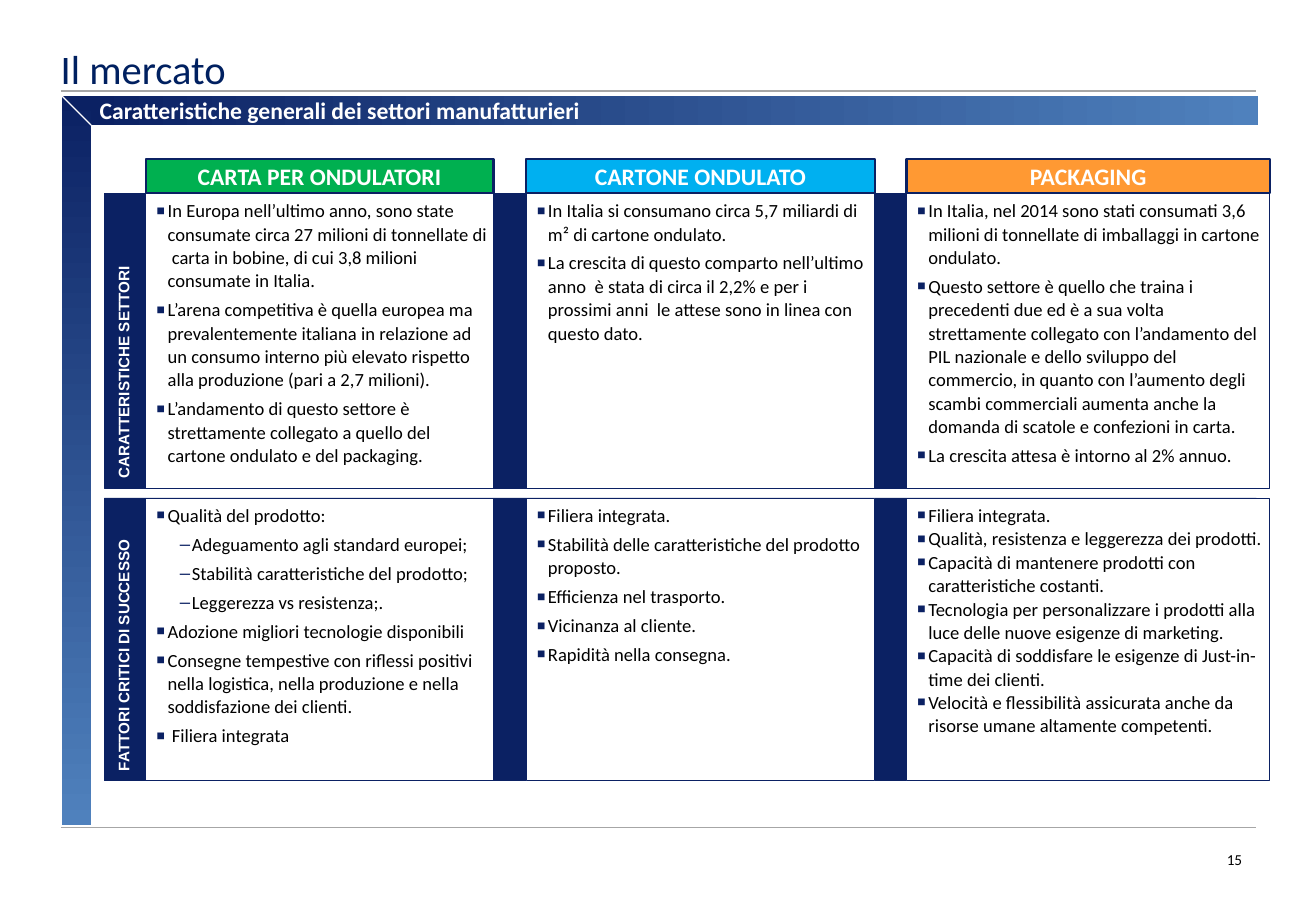
from dataclasses import dataclass

from lxml import etree
from pptx import Presentation
from pptx import util as u
from pptx.dml.color import RGBColor
from pptx.enum import shapes, text
from pptx.oxml import ns


@dataclass(frozen=True)
class Theme:
    navy: str = "0B2163"
    blue: str = "4F81BD"
    title: str = "002060"
    rule: str = "A6A6A6"
    white: str = "FFFFFF"
    black: str = "000000"
    green: str = "00B050"
    cyan: str = "00B0F0"
    orange: str = "FF9933"
    body_font: str = "Calibri"
    label_font: str = "Arial"
    title_size: float = 24
    heading_size: float = 14
    body_size: float = 11
    small_size: float = 9


THEME = Theme()
LEFT, CENTER = text.PP_ALIGN.LEFT, text.PP_ALIGN.CENTER
TOP, MIDDLE = text.MSO_ANCHOR.TOP, text.MSO_ANCHOR.MIDDLE


class SlideBuilder:
    def __init__(self, slide, theme):
        self.slide = slide
        self.theme = theme

    def rule(self, start, end, color):
        points = [u.Inches(value) for value in (*start, *end)]
        line = self.slide.shapes.add_connector(shapes.MSO_CONNECTOR.STRAIGHT, *points)
        line.line.color.rgb = RGBColor.from_string(color)
        line.line.width = u.Pt(0.75)
        etree.SubElement(line._element.spPr, ns.qn("a:effectLst"))

    def rectangle(self, box, fill, border=0):
        shape = self.slide.shapes.add_shape(
            shapes.MSO_SHAPE.RECTANGLE, *map(u.Inches, box))
        shape.shadow.inherit = False
        shape.fill.solid()
        shape.fill.fore_color.rgb = RGBColor.from_string(fill)
        if border:
            shape.line.color.rgb = RGBColor.from_string(self.theme.navy)
            shape.line.width = u.Pt(border)
        else:
            shape.line.fill.background()
        return shape

    def gradient(self, box, angle):
        shape = self.rectangle(box, self.theme.navy)
        shape.fill.gradient()
        shape.fill.gradient_angle = angle
        for stop, color in zip(shape.fill.gradient_stops, (self.theme.navy, self.theme.blue)):
            stop.color.rgb = RGBColor.from_string(color)
        return shape

    def text_box(self, box):
        return self.slide.shapes.add_textbox(*map(u.Inches, box))

    def frame(self, shape, insets, anchor):
        frame = shape.text_frame
        frame.word_wrap = True
        frame.vertical_anchor = anchor
        (frame.margin_left, frame.margin_top,
         frame.margin_right, frame.margin_bottom) = map(u.Inches, insets)
        return frame

    def run(self, paragraph, words, size, color, bold=False, font=None):
        run = paragraph.add_run()
        run.text = words
        run.font.name = font or self.theme.body_font
        run.font.size = u.Pt(size)
        run.font.bold = bold
        run.font.color.rgb = RGBColor.from_string(color)

    def label(self, shape, words, size, color, insets=(0, 0, 0, 0), anchor=MIDDLE,
              align=CENTER, bold=False, font=None, spacing=1.0):
        frame = self.frame(shape, insets, anchor)
        paragraph = frame.paragraphs[0]
        paragraph.alignment = align
        paragraph.line_spacing = spacing
        self.run(paragraph, words, size, color, bold, font)
        return frame

    def heading(self, box, words, fill):
        self.label(self.rectangle(box, fill, 1.5), words, self.theme.heading_size,
                   self.theme.white, (0.04,) * 4, bold=True)

    def band(self, box, words):
        frame = self.label(self.rectangle(box, self.theme.navy, 0.5), words,
                           self.theme.small_size, self.theme.white, (0.08,) * 4,
                           TOP, LEFT, True, self.theme.label_font)
        frame._txBody.bodyPr.set("vert", "vert270")

    def bullet(self, paragraph, mark, level, margin, hanging, size):
        paragraph.level = level
        properties = paragraph._p.get_or_add_pPr()
        properties.set("marL", str(u.Inches(margin)))
        properties.set("indent", str(-u.Inches(hanging)))
        color = etree.SubElement(properties, ns.qn("a:buClr"))
        etree.SubElement(color, ns.qn("a:srgbClr"), val=self.theme.navy)
        etree.SubElement(properties, ns.qn("a:buSzPct"), val=str(size * 1000))
        etree.SubElement(properties, ns.qn("a:buFont"), typeface=self.theme.label_font)
        etree.SubElement(properties, ns.qn("a:buChar"), char=mark)

    def cell(self, box, items, gap):
        shape = self.rectangle(box, self.theme.white, 0.5)
        frame = self.frame(shape, (0.08, 0.04, 0.04, 0.04), TOP)
        for index, item in enumerate(items):
            paragraph = frame.add_paragraph() if index else frame.paragraphs[0]
            if item.startswith(DASH):
                self.bullet(paragraph, DASH, 3, 0.3, 0.1, 100)
            else:
                self.bullet(paragraph, "■", 2, 0.1, 0.09, 75)
            paragraph.alignment = LEFT
            paragraph.line_spacing = 1.05
            paragraph.space_before = u.Pt(gap if index else 0)
            self.run(paragraph, item.removeprefix(DASH), self.theme.body_size,
                     self.theme.black)


DASH = "–"
COLUMNS = [
    ("CARTA PER ONDULATORI", THEME.green, 2.86),
    ("CARTONE ONDULATO", THEME.cyan, 2.87),
    ("PACKAGING", THEME.orange, 2.99),
]
SECTORS = [
    ["In Europa nell’ultimo anno, sono state consumate circa 27 milioni di tonnellate di  carta in bobine, di cui 3,8 milioni consumate in Italia.",
     "L’arena competitiva è quella europea ma prevalentemente italiana in relazione ad un consumo interno più elevato rispetto alla produzione (pari a 2,7 milioni).",
     "L’andamento di questo settore è strettamente collegato a quello del cartone ondulato e del packaging."],
    ["In Italia si consumano circa 5,7 miliardi di m² di cartone ondulato.",
     "La crescita di questo comparto nell’ultimo anno  è stata di circa il 2,2% e per i prossimi anni  le attese sono in linea con questo dato."],
    ["In Italia, nel 2014 sono stati consumati 3,6 milioni di tonnellate di imballaggi in cartone ondulato.",
     "Questo settore è quello che traina i precedenti due ed è a sua volta strettamente collegato con l’andamento del PIL nazionale e dello sviluppo del commercio, in quanto con l’aumento degli scambi commerciali aumenta anche la domanda di scatole e confezioni in carta.",
     "La crescita attesa è intorno al 2% annuo."],
]
SUCCESS_FACTORS = [
    ["Qualità del prodotto:",
     "–Adeguamento agli standard europei;",
     "–Stabilità caratteristiche del prodotto;",
     "–Leggerezza vs resistenza;.",
     "Adozione migliori tecnologie disponibili",
     "Consegne tempestive con riflessi positivi nella logistica, nella produzione e nella soddisfazione dei clienti.",
     " Filiera integrata"],
    ["Filiera integrata.",
     "Stabilità delle caratteristiche del prodotto proposto.",
     "Efficienza nel trasporto.",
     "Vicinanza al cliente.",
     "Rapidità nella consegna."],
    ["Filiera integrata.",
     "Qualità, resistenza e leggerezza dei prodotti.",
     "Capacità di mantenere prodotti con caratteristiche costanti.",
     "Tecnologia per personalizzare i prodotti alla luce delle nuove esigenze di marketing.",
     "Capacità di soddisfare le esigenze di Just-in-time dei clienti.",
     "Velocità e flessibilità assicurata anche da risorse umane altamente competenti."],
]
ROWS = [
    ("CARATTERISTICHE SETTORI", 1.59, 2.43, SECTORS, (3.3, 3.3, 3.3)),
    ("FATTORI CRITICI DI SUCCESSO", 4.1, 2.33, SUCCESS_FACTORS, (3.3, 3.3, 0)),
]
FIRST_COLUMN, COLUMN_PITCH = 1.2, 3.13


def main():
    presentation = Presentation()
    presentation.slide_width, presentation.slide_height = u.Inches(10.83), u.Inches(7.5)
    slide = presentation.slides.add_slide(presentation.slide_layouts[6])
    builder = SlideBuilder(slide, THEME)

    for y in (0.75, 6.81):
        builder.rule((0.5, y), (10.34, y), THEME.rule)
    builder.label(builder.text_box((0.5, 0.27, 9.84, 0.48)), "Il mercato",
                  THEME.title_size, THEME.title, (0, 0.05, 0.1, 0.05), TOP, LEFT, spacing=1.1)
    builder.label(builder.text_box((9.98, 7, 0.36, 0.16)), "15",
                  THEME.small_size, THEME.black)

    for name, top, height, cells, gaps in ROWS:
        builder.band((0.86, top, 9.48, height), name)
        for index, (items, gap) in enumerate(zip(cells, gaps)):
            left = FIRST_COLUMN + index * COLUMN_PITCH
            builder.cell((left, top, COLUMNS[index][2], height), items, gap)
    for index, (name, color, width) in enumerate(COLUMNS):
        builder.heading((FIRST_COLUMN + index * COLUMN_PITCH, 1.31, width, 0.28), name, color)

    builder.label(builder.gradient((0.74, 0.79, 9.61, 0.24), 0),
                  "Caratteristiche generali dei settori manufatturieri",
                  THEME.heading_size, THEME.white, (0.08, 0, 0, 0), align=LEFT, bold=True)
    builder.gradient((0.51, 0.79, 0.24, 6), 270)
    builder.rule((0.51, 0.79), (0.75, 1.03), THEME.white)
    presentation.save("out.pptx")


if __name__ == "__main__":
    main()
